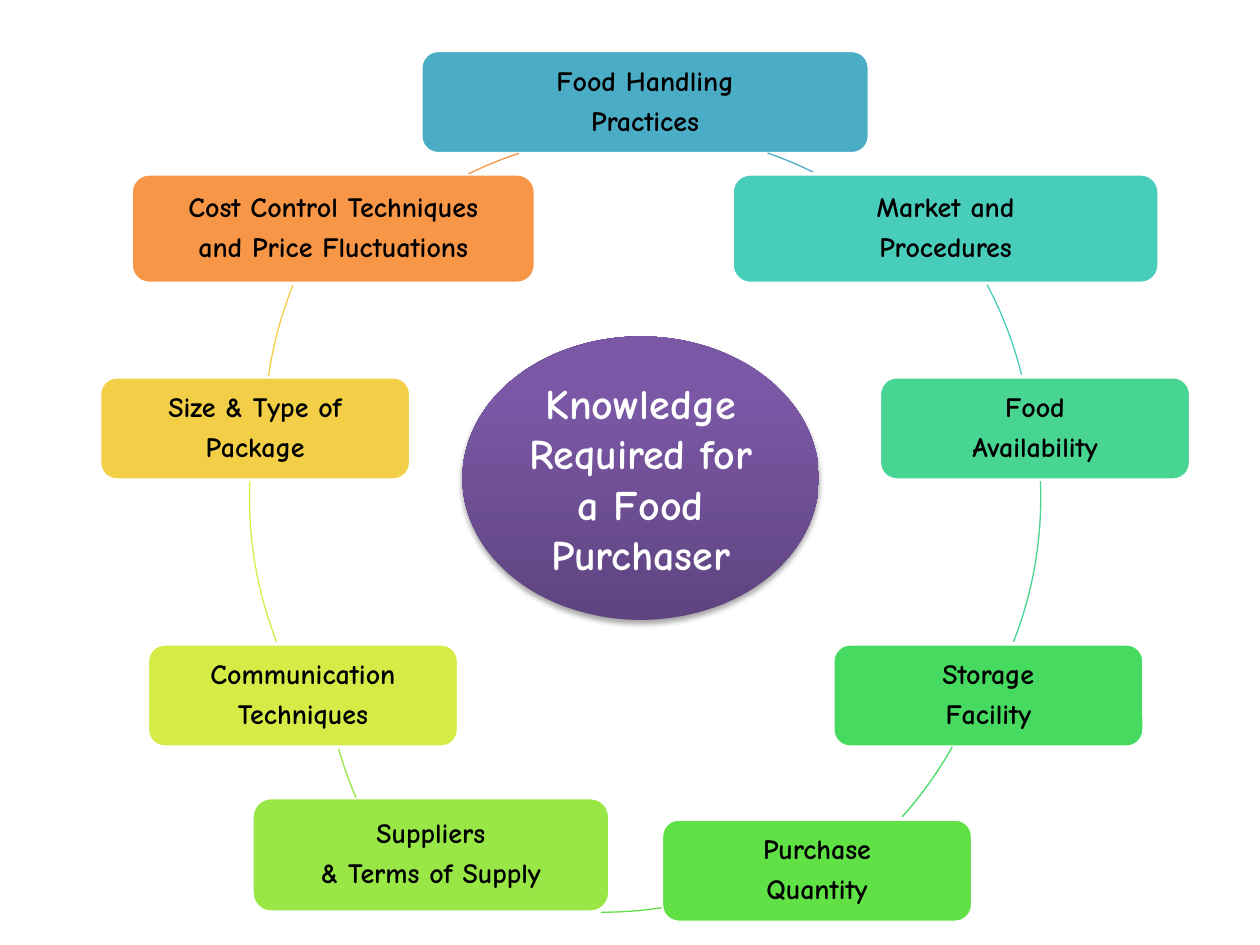
from lxml.etree import SubElement
from copy import deepcopy
from pptx import Presentation
from pptx.dml.color import RGBColor
from pptx.enum.shapes import MSO_SHAPE
from pptx.enum.text import MSO_ANCHOR, PP_ALIGN
from pptx.oxml.ns import qn
from pptx.util import Inches, Pt

FONT = "Comic Neue"
WHITE = RGBColor(255, 255, 255)
BLACK = RGBColor(0, 0, 0)
DARK = RGBColor(0x5F, 0x44, 0x80)
MID = RGBColor(0x7B, 0x58, 0xA6)
LIGHT = RGBColor(0x7C, 0x57, 0xA8)
RING = 6.28  # diameter of the cycle
WIDE, TALL = 2.47, 0.82  # usual topic size

# Topic lines, colour, box, then arc corner and its start and end degrees
TOPICS = [
    (("Food Handling", "Practices"), "4BACC6",
     (3.34, 0.4, 3.56, TALL), (1.92, 1.04), (289.2, 296.9)),
    (("Market and", "Procedures"), "49CDBB",
     (5.81, 1.38, 3.39, 0.87), (1.92, 0.59), (332.1, 346.4)),
    (("Food", "Availability"), "48D491",
     (6.98, 2.99, WIDE, TALL), (1.98, 0.81), (357.6, 21.4)),
    (("Storage", "Facility"), "47DA61",
     (6.61, 5.11, WIDE, TALL), (1.68, 1.25), (29.3, 41.9)),
    (("Purchase", "Quantity"), "60E146",
     (5.25, 6.5, WIDE, TALL), (1.64, 0.96), (81.4, 90.2)),
    (("Suppliers", "& Terms of Supply"), "98E746",
     (2, 6.33, 2.84, 0.91), (2.57, 1.95), (156.7, 164.5)),
    (("Communication", "Techniques"), "D5EC46",
     (1.17, 5.11, WIDE, TALL), (1.98, 0.81), (158.6, 182.4)),
    (("Size & Type of", "Package"), "F2CF46",
     (0.79, 2.99, WIDE, TALL), (2.1, 0.29), (188.1, 201.9)),
    (("Cost Control Techniques", "and Price Fluctuations"), "F79646",
     (1.04, 1.38, 3.21, 0.87), (1.96, 1.06), (243.9, 251.8)),
]


def add_part(shapes, kind, box):
    part = shapes.add_shape(kind, *[Inches(n) for n in box])
    part.shadow.inherit = False
    return part


def add_text(para, text, size, color):
    para.alignment = PP_ALIGN.CENTER
    run = para.add_run()
    run.text = text
    run.font.name = FONT
    run.font.size = Pt(size)
    run.font.bold = True
    run.font.color.rgb = color


def add_topic(shapes, lines, color, box):
    card = add_part(shapes, MSO_SHAPE.ROUNDED_RECTANGLE, box)
    card.fill.solid()
    card.fill.fore_color.rgb = color
    card.line.color.rgb = WHITE
    card.line.width = Pt(2)
    frame = card.text_frame
    frame.word_wrap = True
    frame.vertical_anchor = MSO_ANCHOR.MIDDLE
    frame.margin_left = frame.margin_right = Inches(0.11)
    frame.margin_top = frame.margin_bottom = Inches(0.11)
    for i, line in enumerate(lines):
        para = frame.add_paragraph() if i else frame.paragraphs[0]
        para.line_spacing = 0.9
        para.space_after = Pt(5.6)
        add_text(para, line, 16, BLACK)


def add_arc(shapes, color, box, angles):
    arc = add_part(shapes, MSO_SHAPE.ARC, box)
    # One degree is 60000 units; adjustments count in 100000
    for i, angle in enumerate(angles):
        arc.adjustments[i] = angle * 0.6
    arc.fill.background()
    arc.line.color.rgb = color
    arc.line.width = Pt(0.75)


def add_cycle(slide):
    group = slide.shapes.add_group_shape()
    for lines, code, box, corner, angles in TOPICS:
        color = RGBColor.from_string(code)
        add_topic(group.shapes, lines, color, box)
        add_arc(group.shapes, color, (*corner, RING, RING), angles)


def add_hub(slide, box):
    hub = add_part(slide.shapes, MSO_SHAPE.OVAL, box)
    hub.line.fill.background()
    # Three-stop gradient, dark at the bottom
    hub.fill.gradient()
    hub.fill.gradient_angle = 90
    stops = hub._element.spPr.find(qn("a:gradFill")).find(qn("a:gsLst"))
    stops.append(deepcopy(stops[-1]))
    shades = ((0, DARK), (0.8, MID), (1, LIGHT))
    for stop, (place, color) in zip(hub.fill.gradient_stops, shades):
        stop.position = place
        stop.color.rgb = color
    # Soft shadow below
    effects = hub._element.spPr.find(qn("a:effectLst"))
    shade = SubElement(effects, qn("a:outerShdw"), blurRad=str(Pt(3.1)),
                       dist=str(Pt(1.8)), dir="5400000", rotWithShape="0")
    tint = SubElement(shade, qn("a:srgbClr"), val="000000")
    SubElement(tint, qn("a:alpha"), val="35000")
    frame = hub.text_frame
    frame.word_wrap = True
    frame.vertical_anchor = MSO_ANCHOR.MIDDLE
    add_text(frame.paragraphs[0], "Knowledge Required for a Food Purchaser",
             24, WHITE)


def main():
    deck = Presentation()
    deck.slide_width, deck.slide_height = Inches(10), Inches(7.5)
    slide = deck.slides.add_slide(deck.slide_layouts[6])
    add_cycle(slide)
    add_hub(slide, (3.67, 2.67, 2.83, 2.25))
    deck.save("out.pptx")


if __name__ == "__main__":
    main()
